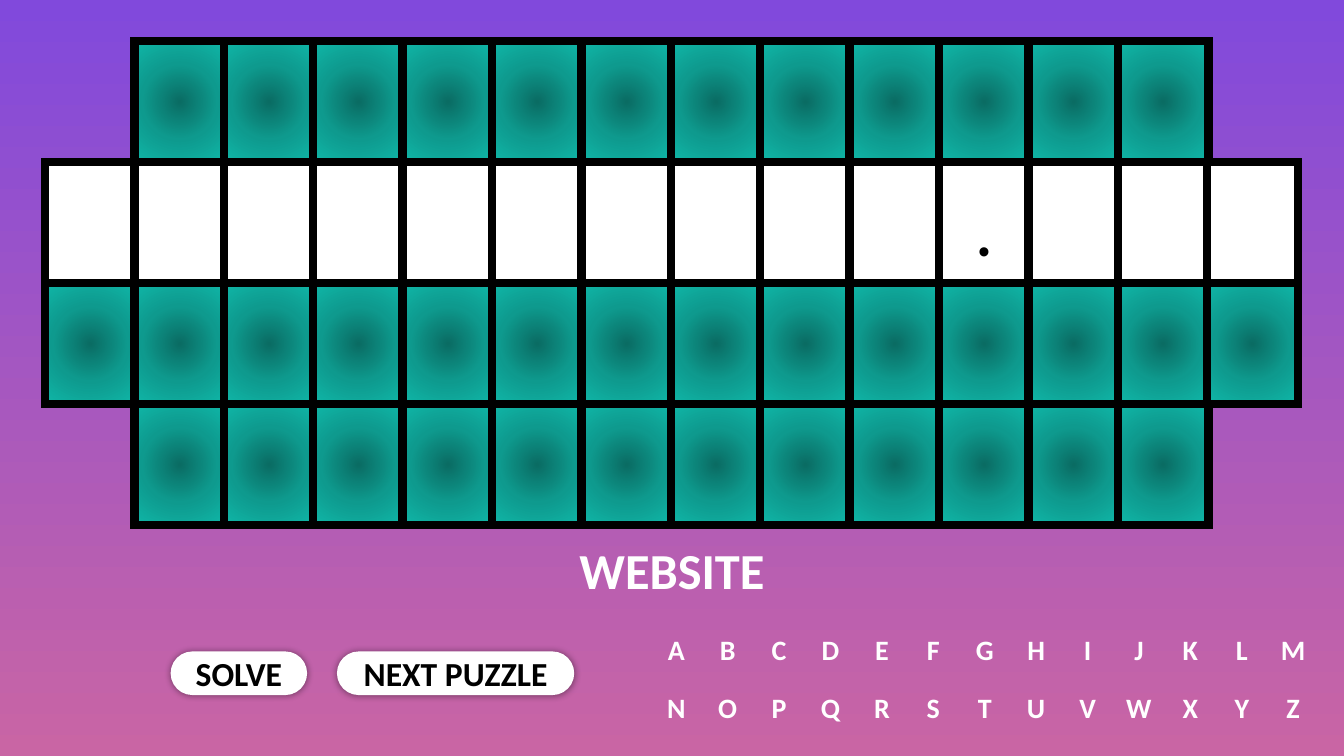
"""Build a word-puzzle board slide with its category, buttons and alphabet."""
import pptx
import pptx.dml.color
import pptx.enum.shapes
import pptx.enum.text
import pptx.oxml
import pptx.oxml.ns
import pptx.util

Pt = pptx.util.Pt
SHAPE = pptx.enum.shapes.MSO_SHAPE
NS = 'xmlns:a="http://schemas.openxmlformats.org/drawingml/2006/main"'

COLORS = {
    "sky": "8149DC", "dusk": "C965A4", "white": "FFFFFF", "black": "000000",
    "teal_core": "0A6C63", "teal_mid": "0E9A8E", "teal_edge": "10B7A8",
}
BOARD = [
    (1, "############"),
    (0, "          .   "),
    (0, "##############"),
    (1, "############"),
]
CATEGORY = "WEBSITE"
BUTTONS = [("SOLVE", 122.4, 96.5), ("NEXT PUZZLE", 241.2, 168.5)]
ALPHABET = ["ABCDEFGHIJKLM", "NOPQRSTUVWXYZ"]

SLIDE_W, SLIDE_H = 960, 540
BOARD_X, BOARD_Y, CELL_PITCH = 32.2, 29.5, 63.85
CELL_W, CELL_H, CELL_LINE = 64.8, 86.4, 6
CATEGORY_Y, TEXT_H = 384.5, 44.6
BUTTON_Y, BUTTON_H = 465.8, 30.2
LETTER_X, LETTER_Y, LETTER_W = 468.7, 441.4, 28.8
LETTER_DX, LETTER_DY = 36.72, 41.8


def rgb(name):
    return pptx.dml.color.RGBColor.from_string(COLORS[name])


def write(sp, text, size, font, color, bold):
    tf = sp.text_frame
    tf.word_wrap = True
    tf.margin_left = tf.margin_right = tf.margin_top = tf.margin_bottom = 0
    tf.vertical_anchor = pptx.enum.text.MSO_ANCHOR.MIDDLE
    p = tf.paragraphs[0]
    p.alignment = pptx.enum.text.PP_ALIGN.CENTER
    r = p.add_run()
    r.text = text
    r.font.size, r.font.name, r.font.bold = Pt(size), font, bold
    r.font.color.rgb = rgb(color)


def add_label(s, text, x, y, w, size):
    sp = s.shapes.add_textbox(Pt(x), Pt(y), Pt(w), Pt(TEXT_H))
    write(sp, text, size, "Calibri", "white", True)


def add_box(s, kind, x, y, w, h, line_color, line_width):
    sp = s.shapes.add_shape(kind, Pt(x), Pt(y), Pt(w), Pt(h))
    sp.shadow.inherit = False
    sp.fill.solid()
    sp.fill.fore_color.rgb = rgb("white")
    sp.line.color.rgb = rgb(line_color)
    sp.line.width = Pt(line_width)
    return sp


def fill_teal(sp):
    stops = "".join(
        f'<a:gs pos="{pos}"><a:srgbClr val="{COLORS[name]}"/></a:gs>'
        for pos, name in [(0, "teal_core"), (50000, "teal_mid"), (100000, "teal_edge")])
    grad = pptx.oxml.parse_xml(
        f'<a:gradFill {NS} rotWithShape="1"><a:gsLst>{stops}</a:gsLst><a:path path="circle">'
        '<a:fillToRect l="50000" t="50000" r="50000" b="50000"/></a:path></a:gradFill>')
    spPr = sp._element.spPr
    spPr.replace(spPr.find(pptx.oxml.ns.qn("a:solidFill")), grad)


def add_cell(s, x, y, mark):
    sp = add_box(s, SHAPE.RECTANGLE, x, y, CELL_W, CELL_H, "black", CELL_LINE)
    sp.line._get_or_add_ln().append(pptx.oxml.parse_xml(f'<a:miter {NS} lim="800000"/>'))
    if mark == "#":
        fill_teal(sp)
    elif mark != " ":
        write(sp, mark, 60, "Montserrat", "black", False)


def add_button(s, text, x, w):
    sp = add_box(s, SHAPE.ROUNDED_RECTANGLE, x, BUTTON_Y, w, BUTTON_H, "white", 1)
    sp.adjustments[0] = 0.5
    write(sp, text, 24, "Calibri", "black", True)
    effects = sp._element.spPr.find(pptx.oxml.ns.qn("a:effectLst"))
    effects.append(pptx.oxml.parse_xml(
        f'<a:outerShdw {NS} blurRad="{Pt(5)}" dist="0" dir="0" algn="ctr" rotWithShape="0">'
        f'<a:srgbClr val="{COLORS["black"]}"><a:alpha val="40000"/></a:srgbClr></a:outerShdw>'))


def main():
    prs = pptx.Presentation()
    prs.slide_width, prs.slide_height = Pt(SLIDE_W), Pt(SLIDE_H)
    s = prs.slides.add_slide(prs.slide_layouts[6])
    fill = s.background.fill
    fill.gradient()
    fill.gradient_angle = 270
    for stop, name in zip(fill.gradient_stops, ("sky", "dusk")):
        stop.color.rgb = rgb(name)
    for row, (offset, marks) in enumerate(BOARD):
        for col, mark in enumerate(marks, offset):
            add_cell(s, BOARD_X + col * CELL_PITCH, BOARD_Y + row * CELL_H, mark)
    add_label(s, CATEGORY, 0, CATEGORY_Y, SLIDE_W, 36)
    for text, x, w in BUTTONS:
        add_button(s, text, x, w)
    for row, letters in enumerate(ALPHABET):
        for col, letter in enumerate(letters):
            add_label(s, letter, LETTER_X + col * LETTER_DX,
                      LETTER_Y + row * LETTER_DY, LETTER_W, 20)
    prs.save("out.pptx")


if __name__ == "__main__":
    main()
